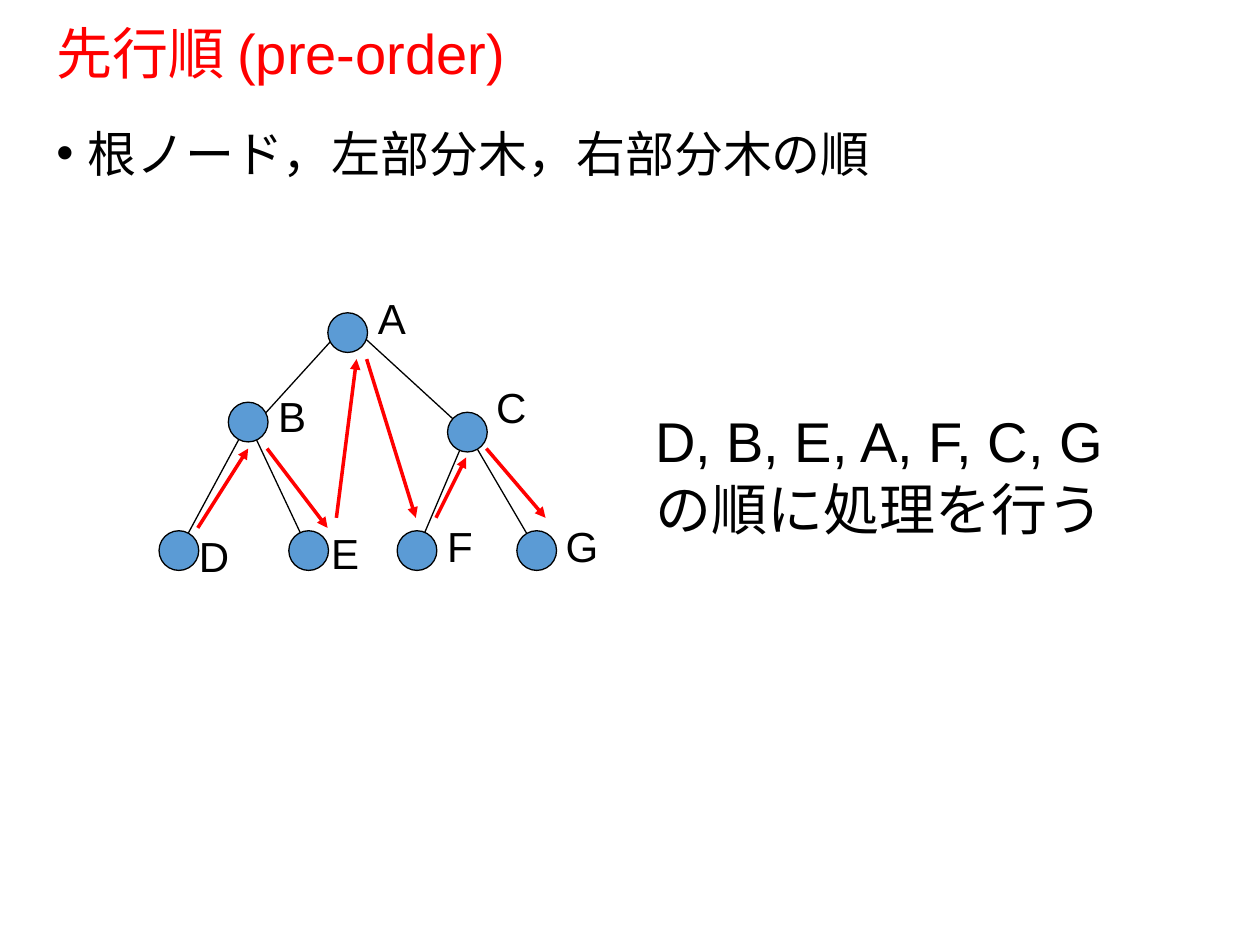
import pptx
import pptx.util
from lxml import etree
from pptx.dml.color import RGBColor
from pptx.enum.shapes import MSO_CONNECTOR, MSO_SHAPE
from pptx.enum.text import MSO_ANCHOR, MSO_AUTO_SIZE
from pptx.oxml.ns import qn
from pptx.util import Inches

BLACK = RGBColor(0x00, 0x00, 0x00)
RED = RGBColor(0xFF, 0x00, 0x00)
BLUE = RGBColor(0x5B, 0x9B, 0xD5)
FONT = "Arial"
NODE_SIZE = 0.315

# name: (node centre, label left and top)
NODES = {
    "A": ((2.76, 2.64), (2.9, 2.27)),
    "B": ((1.97, 3.35), (2.11, 3.05)),
    "D": ((1.42, 4.37), (1.48, 4.16)),
    "E": ((2.45, 4.37), (2.53, 4.14)),
    "F": ((3.31, 4.37), (3.45, 4.08)),
    "G": ((4.26, 4.37), (4.39, 4.08)),
    "C": ((3.71, 3.43), (3.84, 2.98)),
}
EDGES = [
    ((2.76, 2.56), (1.97, 3.43)),
    ((2.76, 2.56), (3.71, 3.43)),
    ((1.97, 3.35), (1.42, 4.37)),
    ((1.97, 3.35), (2.45, 4.37)),
    ((3.71, 3.43), (3.31, 4.37)),
    ((3.71, 3.43), (4.26, 4.37)),
]
VISITS = [
    ((1.57, 4.19), (1.97, 3.56)),
    ((2.12, 3.56), (2.6, 4.19)),
    ((2.67, 4.11), (2.83, 2.85)),
    ((2.91, 2.85), (3.3, 4.11)),
    ((3.46, 4.11), (3.7, 3.63)),
    ((3.86, 3.56), (4.33, 4.11)),
]


class SlideBuilder:
    def __init__(self, s, font=FONT):
        self.s = s
        self.font = font

    def text(self, text, x, y, w, h, size=24, color=BLACK, wrap=False, grow=False,
             anchor=MSO_ANCHOR.TOP, line_spacing=None, bullet=False):
        """Add a text box with one paragraph for each line of text."""
        sp = self.s.shapes.add_textbox(Inches(x), Inches(y), Inches(w), Inches(h))
        tf = sp.text_frame
        tf.word_wrap = wrap
        tf.auto_size = MSO_AUTO_SIZE.SHAPE_TO_FIT_TEXT if grow else MSO_AUTO_SIZE.NONE
        tf.vertical_anchor = anchor
        tf.text = text
        for p in tf.paragraphs:
            if bullet:
                pPr = p._p.get_or_add_pPr()
                pPr.set("marL", str(Inches(0.25)))
                pPr.set("indent", str(Inches(-0.25)))
                etree.SubElement(pPr, qn("a:buFont")).set("typeface", self.font)
                etree.SubElement(pPr, qn("a:buChar")).set("char", "•")
            if line_spacing:
                p.line_spacing = line_spacing
            for r in p.runs:
                r.font.name = self.font
                r.font.size = pptx.util.Pt(size)
                r.font.color.rgb = color

    def node(self, cx, cy):
        sp = self.s.shapes.add_shape(
            MSO_SHAPE.OVAL, Inches(cx - NODE_SIZE / 2), Inches(cy - NODE_SIZE / 2),
            Inches(NODE_SIZE), Inches(NODE_SIZE))
        sp.shadow.inherit = False
        sp.fill.solid()
        sp.fill.fore_color.rgb = BLUE
        sp.line.color.rgb = BLACK
        sp.line.width = pptx.util.Pt(0.75)

    def line(self, start, end, color=BLACK, width=0.75, arrow=False):
        cxn = self.s.shapes.add_connector(
            MSO_CONNECTOR.STRAIGHT, *[Inches(v) for v in (*start, *end)])
        cxn.line.color.rgb = color
        cxn.line.width = pptx.util.Pt(width)
        if arrow:
            ln = cxn.line._get_or_add_ln()
            etree.SubElement(ln, qn("a:tailEnd")).set("type", "triangle")
        etree.SubElement(cxn._element.spPr, qn("a:effectLst"))


def main():
    prs = pptx.Presentation()
    prs.slide_width, prs.slide_height = Inches(10), Inches(7.5)
    b = SlideBuilder(prs.slides.add_slide(prs.slide_layouts[6]))

    b.text("先行順 (pre-order)", 0.35, 0.19, 9.25, 0.51, size=32, color=RED,
           wrap=True, anchor=MSO_ANCHOR.MIDDLE, line_spacing=0.9)
    b.text("根ノード，左部分木，右部分木の順", 0.35, 0.93, 8.73, 1.22, size=28,
           wrap=True, bullet=True)

    for start, end in EDGES:
        b.line(start, end)
    for centre, _ in NODES.values():
        b.node(*centre)
    for name, (_, corner) in NODES.items():
        b.text(name, *corner, 0.44, 0.5, grow=True)

    b.text("D, B, E, A, F, C, G\nの順に処理を行う", 5.1, 3.18, 3.79, 1.18, size=32)
    for start, end in VISITS:
        b.line(start, end, color=RED, width=2, arrow=True)

    prs.save("out.pptx")


if __name__ == "__main__":
    main()
